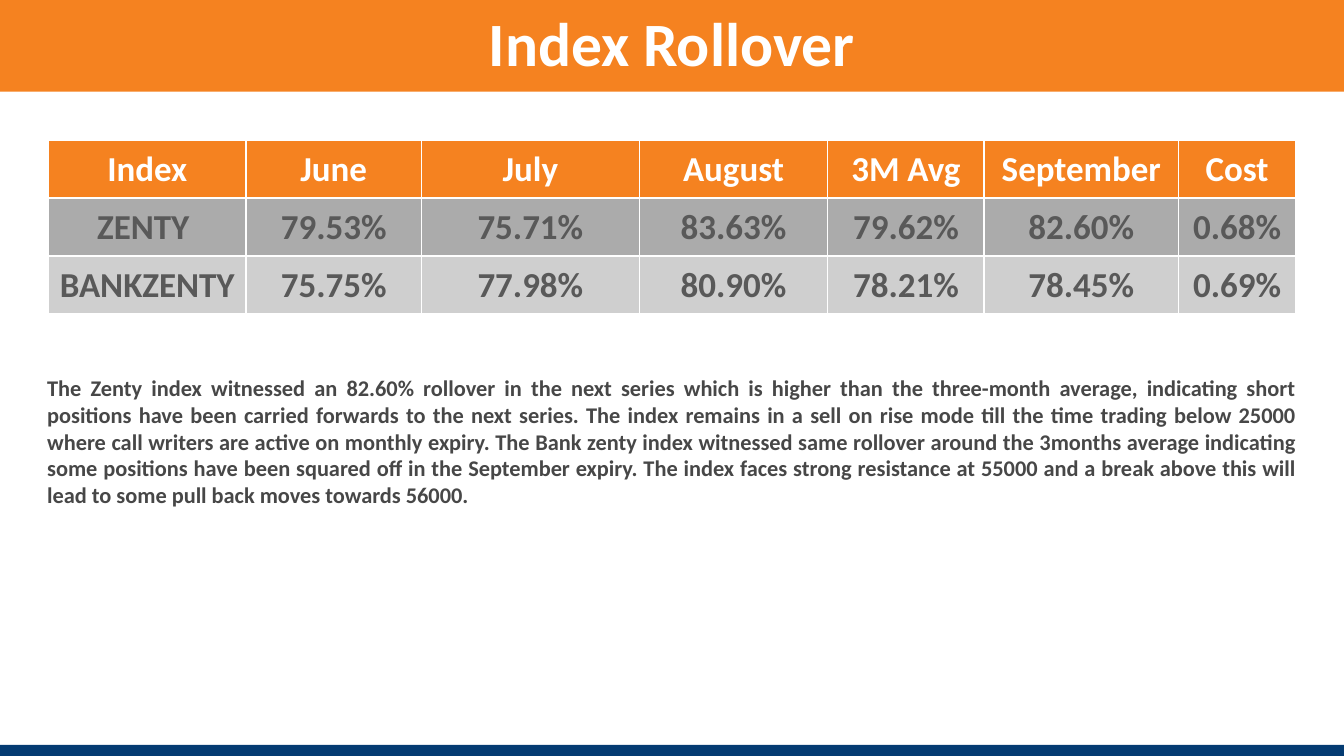
from lxml.etree import SubElement
from pptx import Presentation
from pptx.dml.color import RGBColor
from pptx.enum.shapes import MSO_SHAPE
from pptx.enum.text import MSO_ANCHOR, PP_ALIGN
from pptx.oxml.ns import qn
from pptx.util import Cm, Pt

COLORS = {
    "orange": "F58220", "navy": "043B72", "white": "FFFFFF",
    "body": "474747", "figures": "595959",
    "dark_band": "ABABAB", "light_band": "CFCFCF",
}
SLIDE_WIDTH, SLIDE_HEIGHT = 33.87, 19.05

ROLLOVER = [
    ["Index", "June", "July", "August", "3M Avg", "September", "Cost"],
    ["ZENTY ", "79.53%", "75.71%", "83.63%", "79.62%", "82.60%", "0.68%"],
    ["BANKZENTY", "75.75%", "77.98%", "80.90%", "78.21%", "78.45%", "0.69%"],
]
COLUMN_WIDTHS = [4.98, 4.42, 5.49, 4.75, 3.94, 4.9, 2.95]
ROW_HEIGHTS = [1.45, 1.47, 1.45]
# Fill, text colour, top and bottom border width of each row
ROW_STYLES = [
    ("orange", "white", 1, 1.5),
    ("dark_band", "figures", 1.5, 1),
    ("light_band", "figures", 1, 1),
]
COMMENTARY = (
    "The Zenty index witnessed an 82.60% rollover in the next series which is "
    "higher than the three-month average, indicating short positions have been "
    "carried forwards to the next series. The index remains in a sell on rise "
    "mode till the time trading below 25000 where call writers are active on "
    "monthly expiry. The Bank zenty index witnessed same rollover around the "
    "3months average indicating some positions have been squared off in the "
    "September expiry. The index faces strong resistance at 55000 and a break "
    "above this will lead to some pull back moves towards 56000."
)


def rgb(name):
    return RGBColor.from_string(COLORS[name])


def write(frame, text, *, size, color, align=PP_ALIGN.CENTER, font="Calibri"):
    paragraph = frame.paragraphs[0]
    paragraph.alignment = align
    run = paragraph.add_run()
    run.text = text
    run.font.name = font
    run.font.size = Pt(size)
    run.font.bold = True
    run.font.color.rgb = rgb(color)


def add_border(cell, side, width):
    line = SubElement(cell._tc.get_or_add_tcPr(), qn(f"a:ln{side}"), w=str(Pt(width)))
    fill = SubElement(line, qn("a:solidFill"))
    SubElement(fill, qn("a:srgbClr"), val=COLORS["white"])


class RolloverSlide:
    def __init__(self, presentation):
        self.slide = presentation.slides.add_slide(presentation.slide_layouts[6])

    def band(self, top, height, color):
        band = self.slide.shapes.add_shape(
            MSO_SHAPE.RECTANGLE, 0, Cm(top), Cm(SLIDE_WIDTH), Cm(height))
        band.shadow.inherit = False
        band.fill.solid()
        band.fill.fore_color.rgb = rgb(color)
        band.line.fill.background()

    def text(self, text, left, top, width, height, **style):
        box = self.slide.shapes.add_textbox(Cm(left), Cm(top), Cm(width), Cm(height))
        box.text_frame.word_wrap = True
        write(box.text_frame, text, **style)

    def table(self, rows, left, top):
        table = self.slide.shapes.add_table(
            len(rows), len(COLUMN_WIDTHS), Cm(left), Cm(top),
            Cm(sum(COLUMN_WIDTHS)), Cm(sum(ROW_HEIGHTS))).table
        for column, width in zip(table.columns, COLUMN_WIDTHS):
            column.width = Cm(width)
        for row, height, values, style in zip(table.rows, ROW_HEIGHTS, rows, ROW_STYLES):
            row.height = Cm(height)
            for cell, value in zip(row.cells, values):
                self.cell(cell, value, *style)

    def cell(self, cell, value, fill, color, top_line, bottom_line):
        cell.margin_left = cell.margin_top = cell.margin_right = Cm(0.03)
        cell.margin_bottom = 0
        cell.vertical_anchor = MSO_ANCHOR.MIDDLE
        for side, width in zip("LRTB", (1, 1, top_line, bottom_line)):
            add_border(cell, side, width)
        cell.fill.solid()
        cell.fill.fore_color.rgb = rgb(fill)
        write(cell.text_frame, value, size=25, color=color)


def main():
    presentation = Presentation()
    presentation.slide_width = Cm(SLIDE_WIDTH)
    presentation.slide_height = Cm(SLIDE_HEIGHT)
    page = RolloverSlide(presentation)

    # Footer and header bands
    page.band(18.77, 0.28, "navy")
    page.band(0, 2.31, "orange")

    # Commentary and title
    page.text(COMMENTARY, 0.94, 9.3, 32, 3.68,
              size=16, color="body", align=PP_ALIGN.JUSTIFY)
    page.text("Index Rollover", 0, 0, SLIDE_WIDTH, 2.13, size=44, color="white")

    # Rollover figures
    page.table(ROLLOVER, 1.22, 3.53)

    presentation.save("out.pptx")


if __name__ == "__main__":
    main()
